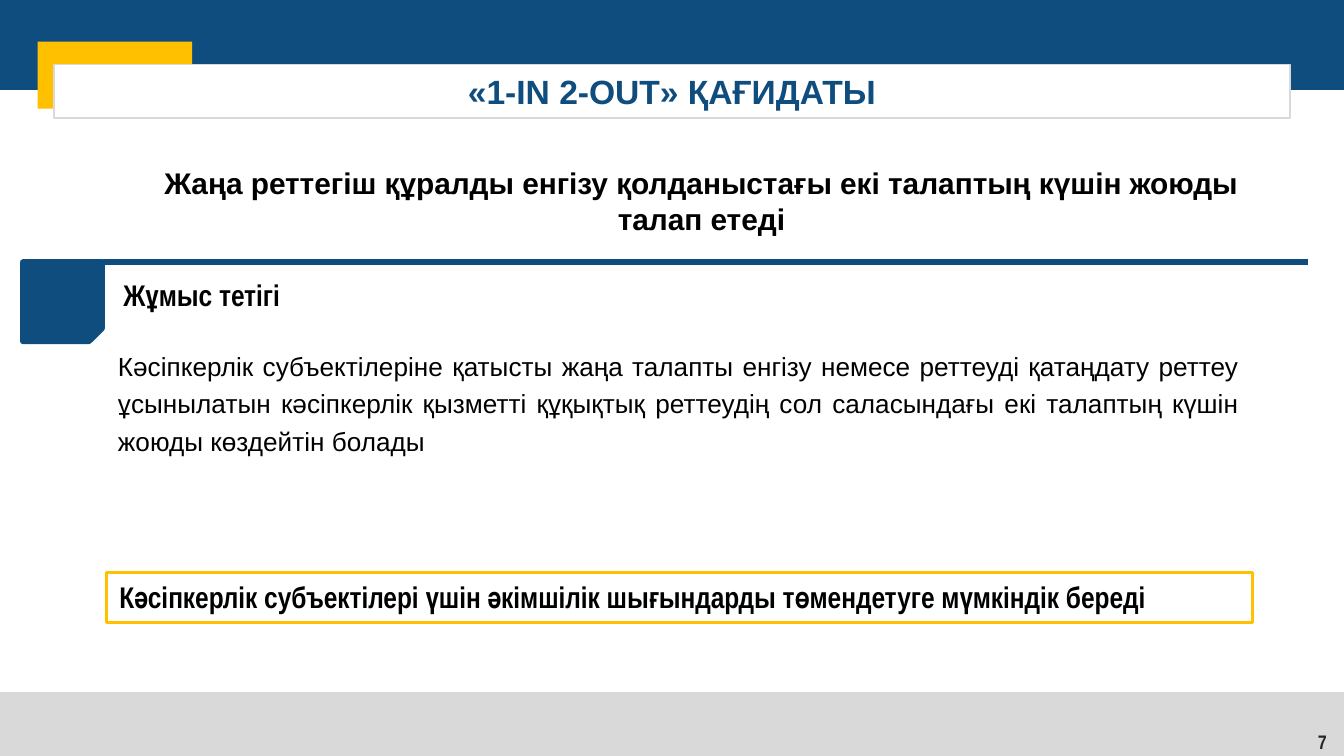
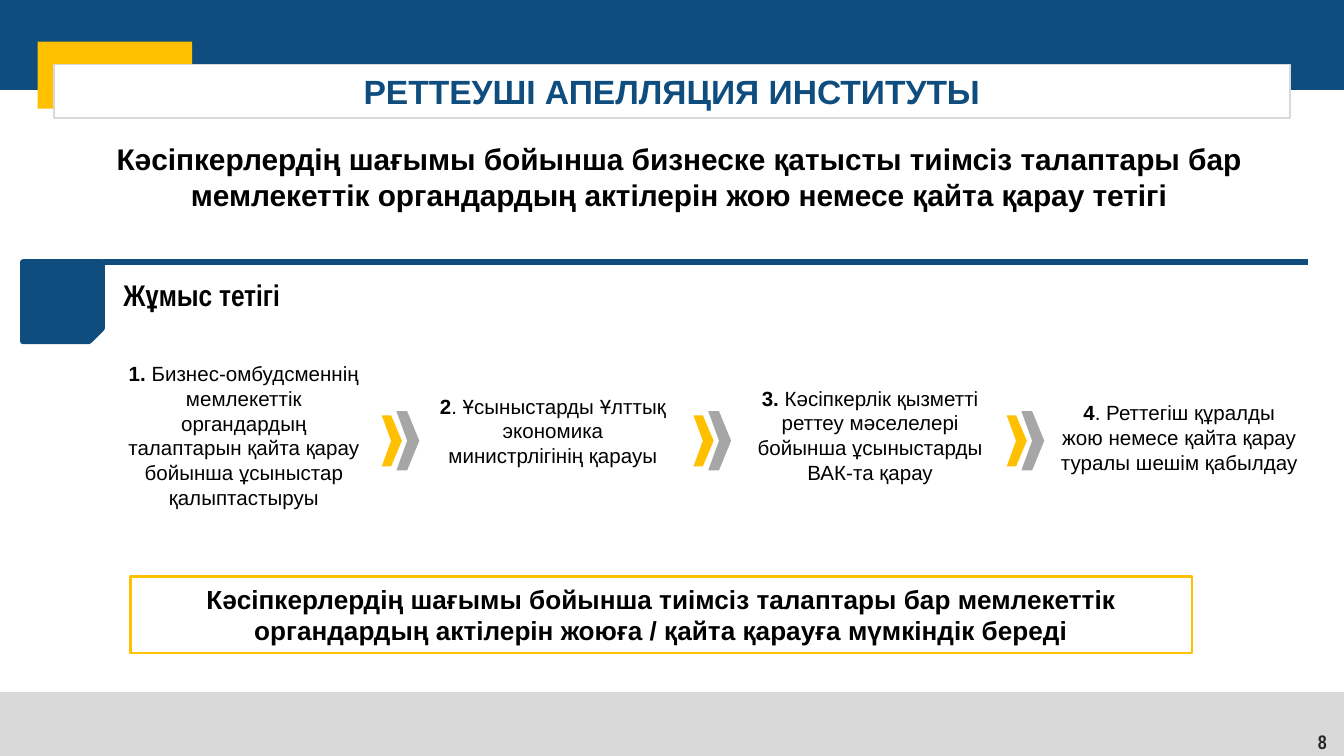
from pptx import Presentation
from pptx.dml.color import RGBColor
from pptx.enum.shapes import MSO_CONNECTOR, MSO_SHAPE
from pptx.enum.text import MSO_ANCHOR, MSO_AUTO_SIZE, PP_ALIGN
from pptx.oxml.ns import qn
from pptx.util import Emu, Pt
from lxml.etree import SubElement

# 100 px to the inch
EMU_PER_PX = 9144
SLIDE_WIDTH = 1000

BLUE = "104D7F"
YELLOW = "FFC000"
LIGHT_GRAY = "D9D9D9"
MID_GRAY = "A6A6A6"
WHITE = "FFFFFF"
BLACK = "000000"
NUMBER_GRAY = "262626"

SANS = "Arial"
NARROW = "Arial Narrow"


def px(value):
    return Emu(value * EMU_PER_PX)


def color(hex_string):
    return RGBColor.from_string(hex_string)


def format_runs(paragraph, size, font_name, text_color, bold):
    for run in paragraph.runs:
        run.font.size = Pt(size)
        run.font.name = font_name
        run.font.color.rgb = color(text_color)
        run.font.bold = bold


def write(shape, text, size, font_name=SANS, text_color=BLACK, bold=True,
          align=PP_ALIGN.LEFT, anchor=MSO_ANCHOR.TOP, grow=True):
    """Fill a shape with one paragraph and return that paragraph."""
    frame = shape.text_frame
    frame.text = text
    frame.word_wrap = True
    frame.vertical_anchor = anchor
    frame.auto_size = MSO_AUTO_SIZE.SHAPE_TO_FIT_TEXT if grow else MSO_AUTO_SIZE.NONE
    paragraph = frame.paragraphs[0]
    paragraph.alignment = align
    format_runs(paragraph, size, font_name, text_color, bold)
    return paragraph


def paint(shape, fill=None, line=None, line_width=1):
    shape.shadow.inherit = False
    if fill:
        shape.fill.solid()
        shape.fill.fore_color.rgb = color(fill)
    else:
        shape.fill.background()
    if line:
        shape.line.color.rgb = color(line)
        shape.line.width = Pt(line_width)
    else:
        shape.line.fill.background()


def add_box(slide, box, fill=None, line=None, line_width=1, kind=MSO_SHAPE.RECTANGLE):
    shape = slide.shapes.add_shape(kind, *map(px, box))
    paint(shape, fill, line, line_width)
    return shape


def add_text(slide, box, text, size, **style):
    return write(slide.shapes.add_textbox(*map(px, box)), text, size, **style)


def add_chevron(slide, left, top, width, height, fill):
    notch, right = left + width // 2, left + width
    middle, bottom = top + height // 2, top + height
    builder = slide.shapes.build_freeform(left, top, scale=EMU_PER_PX)
    builder.add_line_segments([(notch, top), (right, middle), (notch, bottom),
                               (left, bottom), (notch, middle)], close=True)
    paint(builder.convert_to_shape(), fill)


def add_step(slide, box, number, text):
    """Step text with a bold number in front."""
    paragraph = add_text(slide, box, number, 11, align=PP_ALIGN.CENTER)
    run = paragraph.add_run()
    run.text = text
    format_runs(paragraph, 11, SANS, BLACK, False)
    paragraph.runs[0].font.bold = True


def add_mechanism_header(slide):
    """Rule, snipped square and subheading above the mechanism."""
    add_text(slide, (82, 201, 500, 37), "Жұмыс тетігі", 16, font_name=NARROW)
    rule = slide.shapes.add_connector(MSO_CONNECTOR.STRAIGHT,
                                      px(77), px(195), px(973), px(195))
    rule.line.color.rgb = color(BLUE)
    rule.line.width = Pt(3)
    SubElement(rule._element.spPr, qn("a:effectLst"))
    square = add_box(slide, (17, 195, 59, 59), BLUE, BLUE, 3,
                     MSO_SHAPE.SNIP_1_RECTANGLE)
    square._element.spPr.find(qn("a:xfrm")).set("flipV", "1")


def add_frame(slide, title, number):
    """Bands, title and page number."""
    add_box(slide, (-2, 515, 1004, 49), LIGHT_GRAY)
    add_box(slide, (0, 0, SLIDE_WIDTH, 67), BLUE)
    add_box(slide, (28, 31, 115, 50), YELLOW)
    title_box = add_box(slide, (40, 48, 920, 40), WHITE, LIGHT_GRAY)
    write(title_box, title, 18, text_color=BLUE, align=PP_ALIGN.CENTER)
    add_text(slide, (764, 537, 233, 30), str(number), 10.5, font_name=NARROW,
             text_color=NUMBER_GRAY, align=PP_ALIGN.RIGHT,
             anchor=MSO_ANCHOR.MIDDLE, grow=False)


def add_content_slide(presentation, title, number, lead_box, lead):
    slide = presentation.slides.add_slide(presentation.slide_layouts[6])
    add_mechanism_header(slide)
    add_frame(slide, title, number)
    add_text(slide, lead_box, lead, 16, align=PP_ALIGN.CENTER)
    return slide


def add_result(slide, box, text, size, **style):
    write(add_box(slide, box, line=YELLOW, line_width=1.5), text, size, **style)


def build_principle_slide(presentation):
    slide = add_content_slide(
        presentation, "«1-IN 2-OUT» ҚАҒИДАТЫ", 7, (82, 118, 880, 64),
        "Жаңа реттегіш құралды енгізу қолданыстағы екі талаптың күшін жоюды талап етеді")
    body = add_text(
        slide, (78, 251, 854, 92),
        "Кәсіпкерлік субъектілеріне қатысты жаңа талапты енгізу немесе реттеуді "
        "қатаңдату реттеу ұсынылатын кәсіпкерлік қызметті құқықтық реттеудің сол "
        "саласындағы екі талаптың күшін жоюды көздейтін болады",
        14, bold=False, align=PP_ALIGN.JUSTIFY)
    body.line_spacing = 1.2
    add_result(
        slide, (79, 426, 853, 37),
        "Кәсіпкерлік субъектілері үшін әкімшілік шығындарды төмендетуге мүмкіндік береді",
        16, font_name=NARROW)


def build_appeal_slide(presentation):
    slide = add_content_slide(
        presentation, "РЕТТЕУШІ АПЕЛЛЯЦИЯ ИНСТИТУТЫ", 8, (51, 100, 909, 64),
        "Кәсіпкерлердің шағымы бойынша бизнеске қатысты тиімсіз талаптары бар "
        "мемлекеттік органдардың актілерін жою немесе қайта қарау тетігі")

    # Steps: left, top, height, number, text
    steps = [
        (83, 264, 121, "1. ", "Бизнес-омбудсменнің мемлекеттік органдардың талаптарын "
                              "қайта қарау бойынша ұсыныстар қалыптастыруы"),
        (313, 288, 66, "2", ". Ұсыныстарды Ұлттық экономика министрлігінің қарауы"),
        (549, 282, 84, "3. ", "Кәсіпкерлік қызметті реттеу мәселелері бойынша "
                              "ұсыныстарды ВАК-та қарау"),
        (779, 293, 66, "4", ". Реттегіш құралды жою немесе қайта қарау туралы "
                            "шешім қабылдау"),
    ]
    for left, top, height, number, text in steps:
        add_step(slide, (left, top, 197, height), number, text)

    # Double arrows between the steps
    for index in range(len(steps) - 1):
        left = 284 + index * 465 // 2
        add_chevron(slide, left, 309, 15, 38, YELLOW)
        add_chevron(slide, left + 11, 306, 17, 44, MID_GRAY)

    add_result(
        slide, (97, 429, 790, 57),
        "Кәсіпкерлердің шағымы бойынша тиімсіз талаптары бар мемлекеттік "
        "органдардың актілерін жоюға / қайта қарауға мүмкіндік береді",
        14, align=PP_ALIGN.CENTER)


def main():
    presentation = Presentation()
    presentation.slide_width = px(SLIDE_WIDTH)
    presentation.slide_height = Emu(px(SLIDE_WIDTH) * 9 // 16)
    build_principle_slide(presentation)
    build_appeal_slide(presentation)
    presentation.save("out.pptx")


if __name__ == "__main__":
    main()
